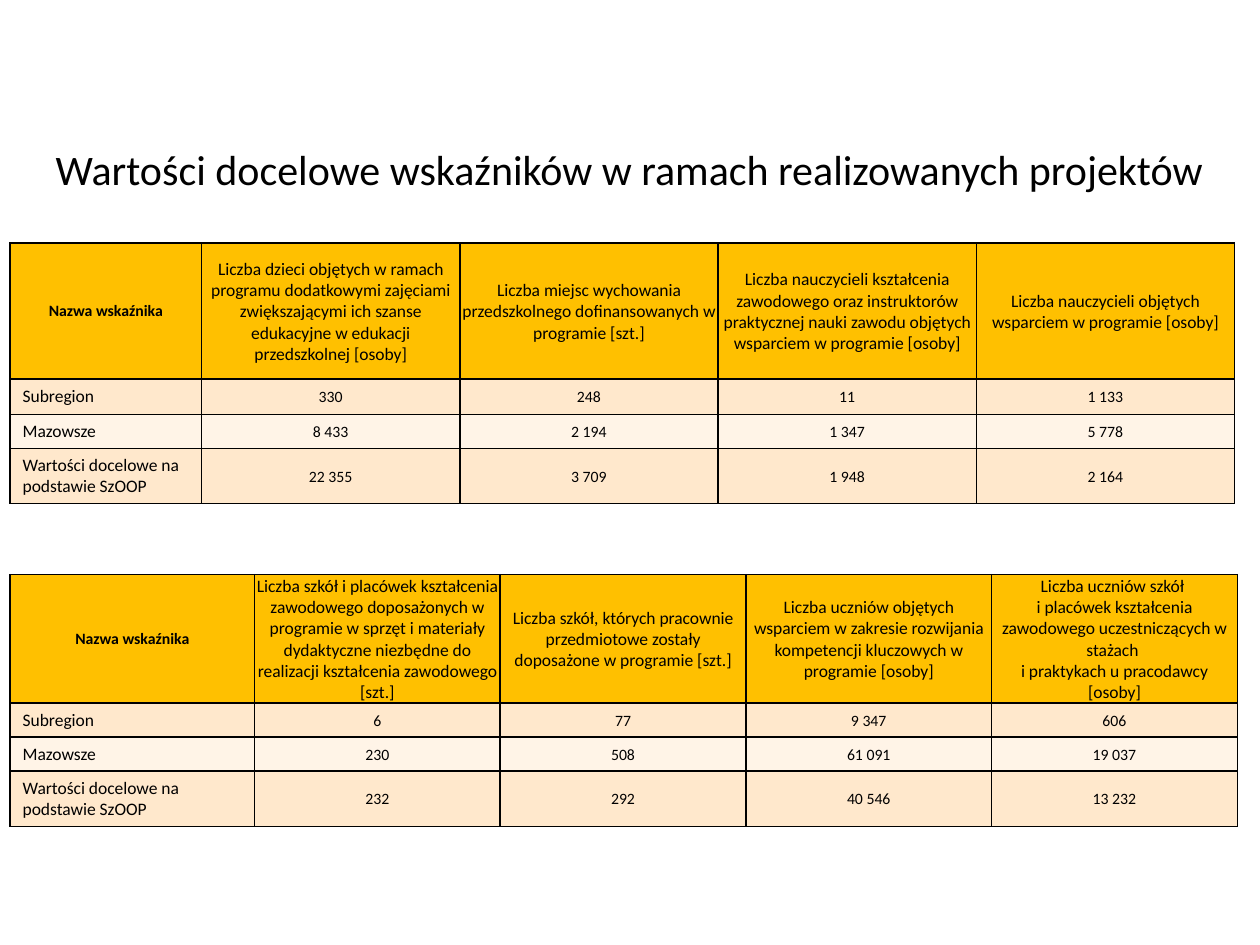
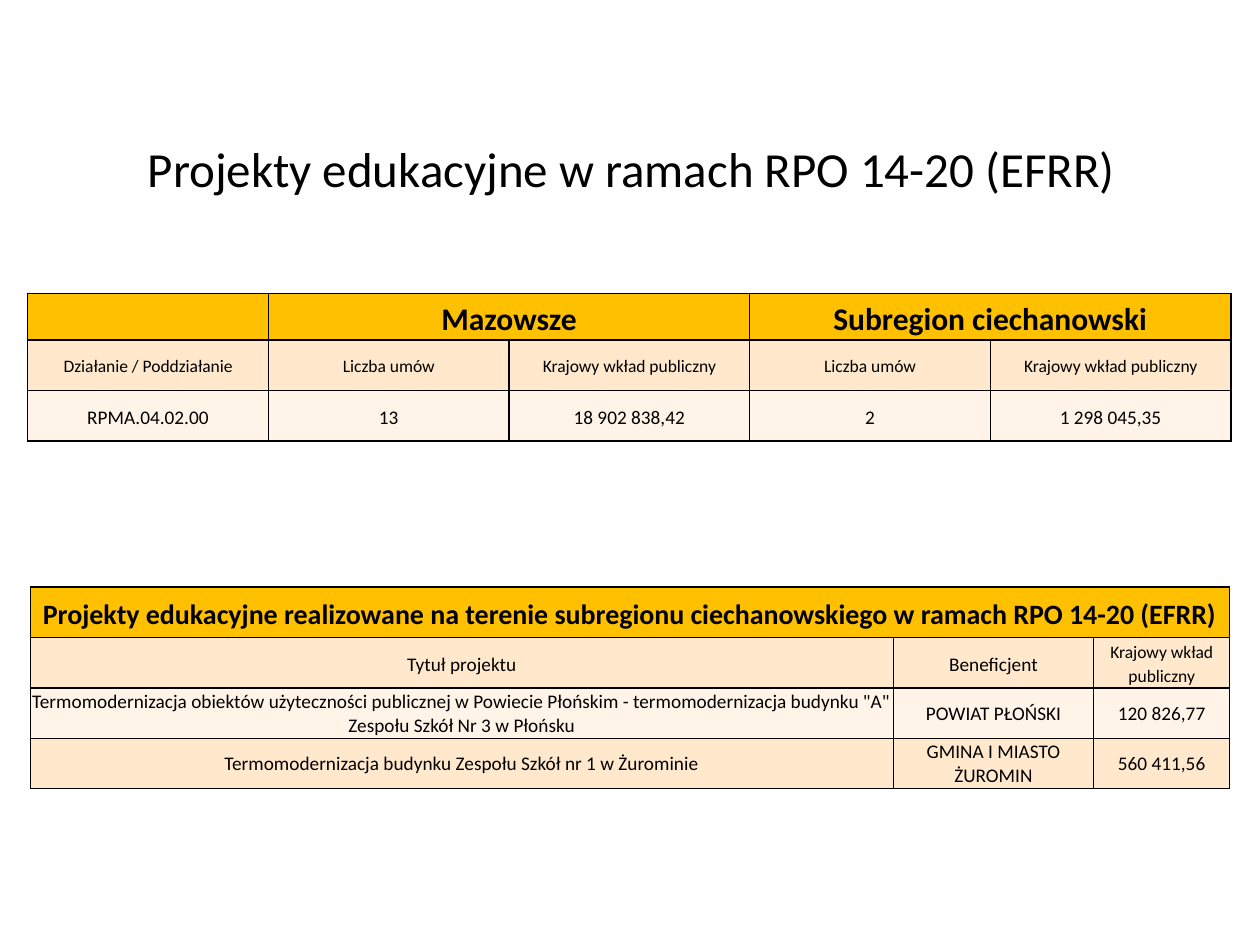
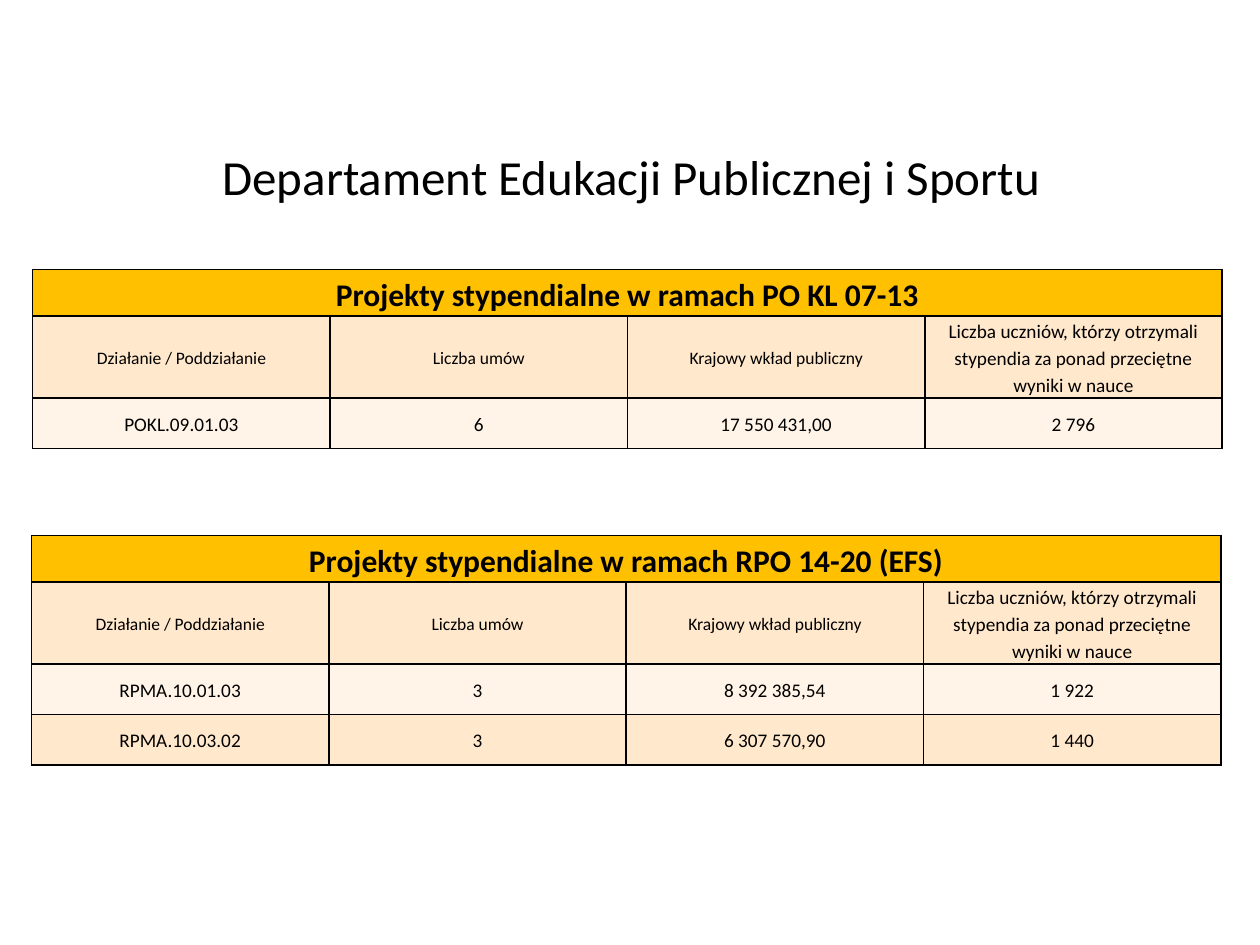
from dataclasses import dataclass
from itertools import cycle

from lxml.etree import SubElement
from pptx import Presentation
from pptx.dml.color import RGBColor
from pptx.enum.text import MSO_ANCHOR as Anchor, PP_ALIGN as Align
from pptx.oxml import parse_xml
from pptx.oxml.ns import nsdecls, qn
from pptx.util import Inches, Pt


# Shared look
@dataclass(frozen=True)
class Theme:
    font: str = "Calibri"
    ink: str = "000000"
    header: str = "FFC000"
    bands: tuple = ("FFE8CC", "FFF4E7")
    border_width: int = 1
    title: int = 28
    title_small: int = 24
    banner: int = 18
    banner_small: int = 16
    large: int = 11
    body: int = 10
    small: int = 9


@dataclass(frozen=True)
class CellStyle:
    size: int
    bold: bool = False
    align: Align = Align.CENTER
    anchor: Anchor = Anchor.MIDDLE
    margins: tuple = (0.05, 0, 0.05, 0)
    spacing: float = 1.15


@dataclass(frozen=True)
class Row:
    height: float
    texts: tuple
    style: CellStyle
    first: CellStyle = None
    last: CellStyle = None

    def style_at(self, column):
        if column == 0 and self.first:
            return self.first
        if column == len(self.texts) - 1 and self.last:
            return self.last
        return self.style


THEME = Theme()
TIGHT = {"margins": (0.01, 0.01, 0.01, 0), "spacing": 1.0}
ROOMY = {"margins": (0.1, 0.05, 0.1, 0.05), "spacing": 1.0}

# Cell styles
BANNER = CellStyle(THEME.banner, bold=True)
BANNER_SMALL = CellStyle(THEME.banner_small, bold=True)
HEADING = CellStyle(THEME.body)
VALUE = CellStyle(THEME.large)
PROJECT = CellStyle(THEME.large, **TIGHT)
INDICATOR = CellStyle(THEME.body, **TIGHT)
COUNT = CellStyle(THEME.small, **TIGHT)
CORNER = CellStyle(THEME.small, bold=True, **ROOMY)
LABEL = CellStyle(THEME.body, align=Align.LEFT, anchor=Anchor.TOP, **ROOMY)


# Style and current slide
class Deck:
    def __init__(self, theme):
        self.theme = theme
        self.presentation = Presentation()
        self.presentation.slide_width = Inches(10)
        self.presentation.slide_height = Inches(7.5)
        self.slide = None

    def add_slide(self, title, left=0.7, width=8.62, size=None, spacing=0.9):
        layout = self.presentation.slide_layouts[5]
        self.slide = self.presentation.slides.add_slide(layout)
        shape = self.slide.shapes.title
        place = {"left": left, "top": 1.06, "width": width, "height": 0.61}
        for name, value in place.items():
            setattr(shape, name, Inches(value))
        shape.text_frame.word_wrap = True
        shape.text_frame.vertical_anchor = Anchor.MIDDLE
        self.add_text(shape.text_frame, title,
                      CellStyle(size or self.theme.title, spacing=spacing))

    def add_text(self, text_frame, text, style):
        paragraph = text_frame.paragraphs[0]
        paragraph.alignment = style.align
        paragraph.line_spacing = style.spacing
        for index, line in enumerate(text.splitlines()):
            if index:
                paragraph.add_line_break()
            run = paragraph.add_run()
            run.text = line
            formats = {"name": self.theme.font, "size": Pt(style.size),
                       "bold": style.bold}
            for name, value in formats.items():
                setattr(run.font, name, value)
            run.font.color.rgb = RGBColor.from_string(self.theme.ink)

    def add_borders(self, cell):
        properties = cell._tc.get_or_add_tcPr()
        for index, side in enumerate(("lnL", "lnR", "lnT", "lnB")):
            line = parse_xml(f"<a:{side} {nsdecls('a')}/>")
            line.set("w", str(Pt(self.theme.border_width)))
            fill = SubElement(line, qn("a:solidFill"))
            SubElement(fill, qn("a:srgbClr")).set("val", self.theme.ink)
            properties.insert(index, line)

    def format_cell(self, cell, text, style, fill):
        cell.fill.solid()
        cell.fill.fore_color.rgb = RGBColor.from_string(fill)
        cell.vertical_anchor = style.anchor
        sides = ("left", "top", "right", "bottom")
        for side, margin in zip(sides, style.margins):
            setattr(cell, f"margin_{side}", Inches(margin))
        self.add_text(cell.text_frame, text or "", style)
        self.add_borders(cell)

    def add_table(self, left, top, widths, rows):
        """Place a table; None in a row extends the cell on its left."""
        height = sum(row.height for row in rows)
        frame = self.slide.shapes.add_table(
            len(rows), len(widths), Inches(left), Inches(top),
            Inches(sum(widths)), Inches(height))
        table = frame.table
        table.first_row = table.horz_banding = False
        for column, width in zip(table.columns, widths):
            column.width = Inches(width)
        bands = cycle(self.theme.bands)
        for row_index, row in enumerate(rows):
            table.rows[row_index].height = Inches(row.height)
            fill = next(bands) if row_index else self.theme.header
            for column, text in enumerate(row.texts):
                self.format_cell(table.cell(row_index, column), text,
                                 row.style_at(column), fill)
            self.merge_spans(table, row_index, row.texts)

    def merge_spans(self, table, row_index, texts):
        starts = [i for i, text in enumerate(texts) if text is not None]
        for start, end in zip(starts, starts[1:] + [len(texts)]):
            if end - start > 1:
                table.cell(row_index, start).merge(
                    table.cell(row_index, end - 1))

    def add_indicator_table(self, top, widths, heights, indicators, counts):
        labels = ("Subregion", "Mazowsze",
                  "Wartości docelowe na podstawie SzOOP")
        rows = [Row(heights[0], ("Nazwa wskaźnika", *indicators),
                    INDICATOR, first=CORNER)]
        for height, label, values in zip(heights[1:], labels, counts):
            rows.append(Row(height, (label, *values), COUNT, first=LABEL))
        self.add_table(0.08, top, widths, rows)

    def add_scholarship_table(self, left, top, banner, records):
        headings = ("Działanie / Poddziałanie", "Liczba umów",
                    "Krajowy wkład publiczny",
                    "Liczba uczniów, którzy otrzymali stypendia "
                    "za ponad przeciętne wyniki w nauce")
        rows = [Row(0.37, (banner, None, None, None), BANNER),
                Row(0.64, headings, HEADING, last=VALUE)]
        rows += [Row(0.4, record, VALUE) for record in records]
        self.add_table(left, top, [2.36] * 4, rows)


# Slide 1
def build_indicators(deck):
    deck.add_slide(
        "Wartości docelowe wskaźników w ramach realizowanych projektów",
        left=0.11, width=9.77, size=THEME.title_small)
    deck.add_indicator_table(
        1.93, [1.52] + [2.05] * 4, (1.08, 0.28, 0.27, 0.43),
        ("Liczba dzieci objętych w ramach programu dodatkowymi zajęciami "
         "zwiększającymi ich szanse edukacyjne w edukacji przedszkolnej "
         "[osoby]",
         "Liczba miejsc wychowania przedszkolnego dofinansowanych "
         "w programie [szt.]",
         "Liczba nauczycieli kształcenia zawodowego oraz instruktorów "
         "praktycznej nauki zawodu objętych wsparciem w programie [osoby]",
         "Liczba nauczycieli objętych wsparciem w programie [osoby]"),
        (("330", "248", "11", "1 133"),
         ("8 433", "2 194", "1 347", "5 778"),
         ("22 355", "3 709", "1 948", "2 164")))
    deck.add_indicator_table(
        4.56, [1.94] + [1.95] * 4, (1.02, 0.27, 0.27, 0.44),
        ("Liczba szkół i placówek kształcenia zawodowego doposażonych "
         "w programie w sprzęt i materiały dydaktyczne niezbędne do "
         "realizacji kształcenia zawodowego [szt.]",
         "Liczba szkół, których pracownie przedmiotowe zostały "
         "doposażone w programie [szt.]",
         "Liczba uczniów objętych wsparciem w zakresie rozwijania "
         "kompetencji kluczowych w programie [osoby]",
         "Liczba uczniów szkół \ni placówek kształcenia zawodowego "
         "uczestniczących w stażach \ni praktykach u pracodawcy [osoby]"),
        (("6", "77", "9 347", "606"),
         ("230", "508", "61 091", "19 037"),
         ("232", "292", "40 546", "13 232")))


# Slide 2
def build_education_projects(deck):
    deck.add_slide("Projekty edukacyjne w ramach RPO 14-20 (EFRR)")
    region_headings = ("Liczba umów", "Krajowy wkład publiczny")
    deck.add_table(0.22, 2.33, [1.91] * 5, [
        Row(0.37, ("", "Mazowsze", None, "Subregion ciechanowski", None),
            BANNER),
        Row(0.4, ("Działanie / Poddziałanie", *region_headings * 2), HEADING),
        Row(0.4, ("RPMA.04.02.00", "13", "18 902 838,42", "2",
                  "1 298 045,35"), VALUE)])
    deck.add_table(0.24, 4.66, [6.85, 1.59, 1.08], [
        Row(0.4, ("Projekty edukacyjne realizowane na terenie subregionu "
                  "ciechanowskiego w ramach RPO 14-20 (EFRR)", None, None),
            BANNER_SMALL),
        Row(0.4, ("Tytuł projektu", "Beneficjent",
                  "Krajowy wkład publiczny"), VALUE, last=HEADING),
        Row(0.4, ("Termomodernizacja obiektów użyteczności publicznej "
                  "w Powiecie Płońskim - termomodernizacja budynku "
                  '"A" Zespołu Szkół Nr 3 w Płońsku',
                  "POWIAT PŁOŃSKI", "120 826,77"), PROJECT),
        Row(0.4, ("Termomodernizacja budynku Zespołu Szkół nr 1 "
                  "w Żurominie", "GMINA I MIASTO ŻUROMIN",
                  "560 411,56"), PROJECT)])


# Slide 3
def build_scholarships(deck):
    deck.add_slide("Departament Edukacji Publicznej i Sportu", spacing=1.15)
    deck.add_scholarship_table(
        0.25, 4.25, "Projekty stypendialne w ramach RPO 14-20 (EFS)",
        [("RPMA.10.01.03", "3", "8 392 385,54", "1 922"),
         ("RPMA.10.03.02", "3", "6 307 570,90", "1 440")])
    deck.add_scholarship_table(
        0.26, 2.14, "Projekty stypendialne w ramach PO KL 07-13",
        [("POKL.09.01.03", "6", "17 550 431,00", "2 796")])


def main():
    deck = Deck(THEME)
    build_indicators(deck)
    build_education_projects(deck)
    build_scholarships(deck)
    deck.presentation.save("out.pptx")


if __name__ == "__main__":
    main()
